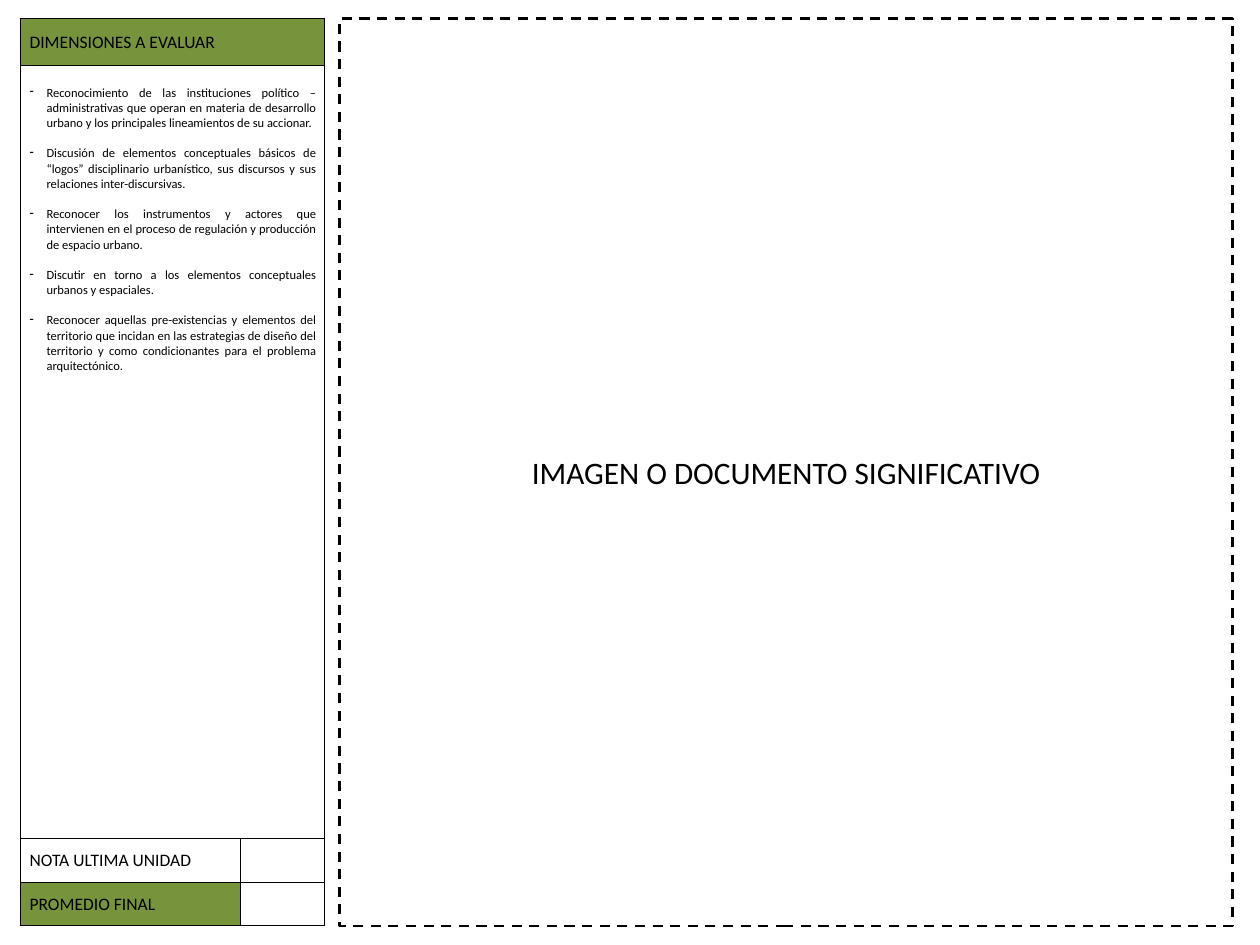
import pptx
import pptx.dml.color
import pptx.enum.dml
import pptx.enum.shapes
import pptx.enum.text
import pptx.oxml.ns
import pptx.util
from lxml import etree

Cm = pptx.util.Cm
Pt = pptx.util.Pt
Align = pptx.enum.text.PP_ALIGN
Anchor = pptx.enum.text.MSO_ANCHOR

BLACK = pptx.dml.color.RGBColor(0x00, 0x00, 0x00)
WHITE = pptx.dml.color.RGBColor(0xFF, 0xFF, 0xFF)
GREEN = pptx.dml.color.RGBColor(0x77, 0x93, 0x3C)

TOP = 0.53
HEIGHT = 25.6
TABLE_LEFT = 0.58
COLUMNS = [6.2, 2.39]
ROWS = [1.32, 21.82, 1.24, 1.22]
THIN, THICK = 0.5, 1

DIMENSIONS = [
    "Reconocimiento de las instituciones político – administrativas que operan en "
    "materia de desarrollo urbano y los principales lineamientos de su accionar.",
    "Discusión de elementos conceptuales básicos de “logos” disciplinario "
    "urbanístico, sus discursos y sus relaciones inter-discursivas.",
    "Reconocer los instrumentos y actores que intervienen en el proceso de "
    "regulación y producción de espacio urbano.",
    "Discutir en torno a los elementos conceptuales urbanos y espaciales.",
    "Reconocer aquellas pre-existencias y elementos del territorio que incidan en "
    "las estrategias de diseño del territorio y como condicionantes para el "
    "problema arquitectónico.",
]


def set_values(target, values):
    for name, value in values.items():
        setattr(target, name, value)


def write(para, text, size, align):
    para.alignment = align
    span = para.add_run()
    span.text = text
    set_values(span.font, {"name": "Calibri", "size": Pt(size)})
    span.font.color.rgb = BLACK


def add_dash_bullet(para, indent):
    properties = para._p.get_or_add_pPr()
    properties.set("marL", str(indent))
    properties.set("indent", str(-indent))
    bullet = etree.SubElement(properties, pptx.oxml.ns.qn("a:buChar"))
    bullet.set("char", "-")


def add_borders(cell, widths):
    """Draw black cell edges; widths maps L, R, T, B, in that order, to points."""
    properties = cell._tc.get_or_add_tcPr()
    for side, width in widths.items():
        edge = etree.SubElement(properties, pptx.oxml.ns.qn("a:ln" + side))
        edge.set("w", str(Pt(width)))
        fill = etree.SubElement(edge, pptx.oxml.ns.qn("a:solidFill"))
        color = etree.SubElement(fill, pptx.oxml.ns.qn("a:srgbClr"))
        color.set("val", str(BLACK))


def fill_cell(cell, color):
    if color is None:
        cell.fill.background()
    else:
        cell.fill.solid()
        cell.fill.fore_color.rgb = color


def add_label(cell, text):
    cell.vertical_anchor = Anchor.MIDDLE
    write(cell.text_frame.paragraphs[0], text, 14, Align.JUSTIFY)


def add_list(cell, items):
    cell.margin_top = Cm(0.56)
    frame = cell.text_frame
    for index, item in enumerate(items):
        para = frame.add_paragraph() if index else frame.paragraphs[0]
        write(para, item, 10, Align.JUSTIFY)
        para.space_after = Pt(12.2)
        add_dash_bullet(para, Cm(0.48))


def add_evaluation_table(page):
    frame = page.shapes.add_table(
        len(ROWS), len(COLUMNS), Cm(TABLE_LEFT), Cm(TOP), Cm(sum(COLUMNS)), Cm(HEIGHT)
    )
    table = frame.table
    set_values(table, {"first_row": False, "horz_banding": False})
    for column, width in zip(table.columns, COLUMNS):
        column.width = Cm(width)
    for row, height in zip(table.rows, ROWS):
        row.height = Cm(height)

    fills = {(0, 0): GREEN, (0, 1): GREEN, (2, 0): WHITE, (3, 0): GREEN}
    for row in range(len(ROWS)):
        for column in range(len(COLUMNS)):
            cell = table.cell(row, column)
            merged = row < 2
            add_borders(cell, {
                "L": THICK if merged or column == 0 else THIN,
                "R": THICK if merged or column == 1 else THIN,
                "T": THIN if row in (0, 3) else THICK,
                "B": THIN if row == 2 else THICK,
            })
            fill_cell(cell, fills.get((row, column)))
    for row in (0, 1):
        table.cell(row, 0).merge(table.cell(row, 1))

    add_label(table.cell(0, 0), "DIMENSIONES A EVALUAR")
    add_list(table.cell(1, 0), DIMENSIONS)
    add_label(table.cell(2, 0), "NOTA ULTIMA UNIDAD")
    add_label(table.cell(3, 0), "PROMEDIO FINAL")


def add_document_frame(page):
    box = page.shapes.add_shape(
        pptx.enum.shapes.MSO_SHAPE.RECTANGLE, Cm(9.58), Cm(TOP), Cm(25.2), Cm(HEIGHT)
    )
    box.shadow.inherit = False
    box.fill.background()
    box.line.color.rgb = BLACK
    set_values(box.line, {
        "width": Pt(2),
        "dash_style": pptx.enum.dml.MSO_LINE.DASH,
    })
    set_values(box.text_frame, {"word_wrap": True, "vertical_anchor": Anchor.MIDDLE})
    write(box.text_frame.paragraphs[0], "IMAGEN O DOCUMENTO SIGNIFICATIVO", 25, Align.CENTER)


def main():
    deck = pptx.Presentation()
    set_values(deck, {"slide_width": Cm(35.56), "slide_height": Cm(26.67)})
    page = deck.slides.add_slide(deck.slide_layouts[6])
    add_evaluation_table(page)
    add_document_frame(page)
    deck.save("out.pptx")


if __name__ == "__main__":
    main()
